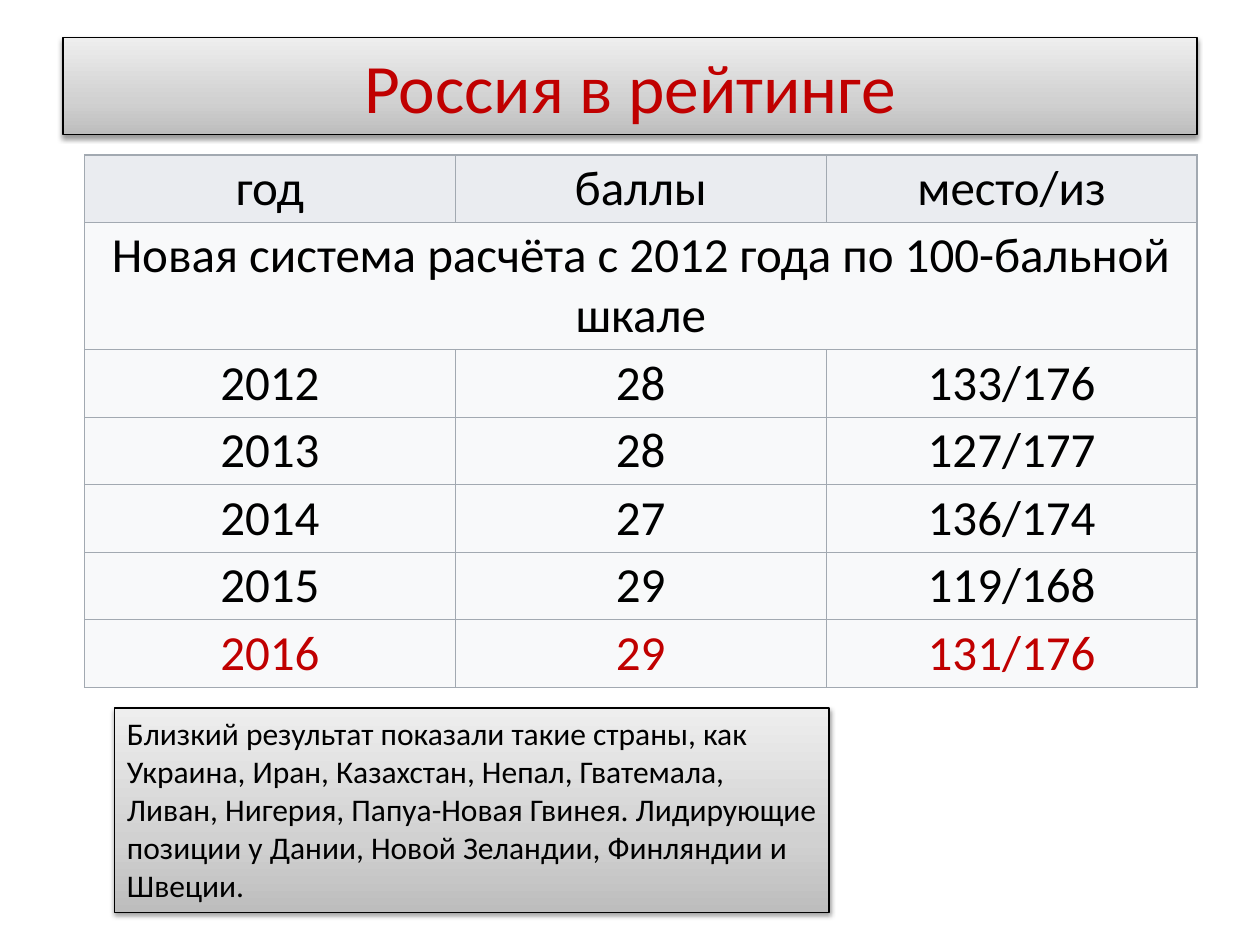
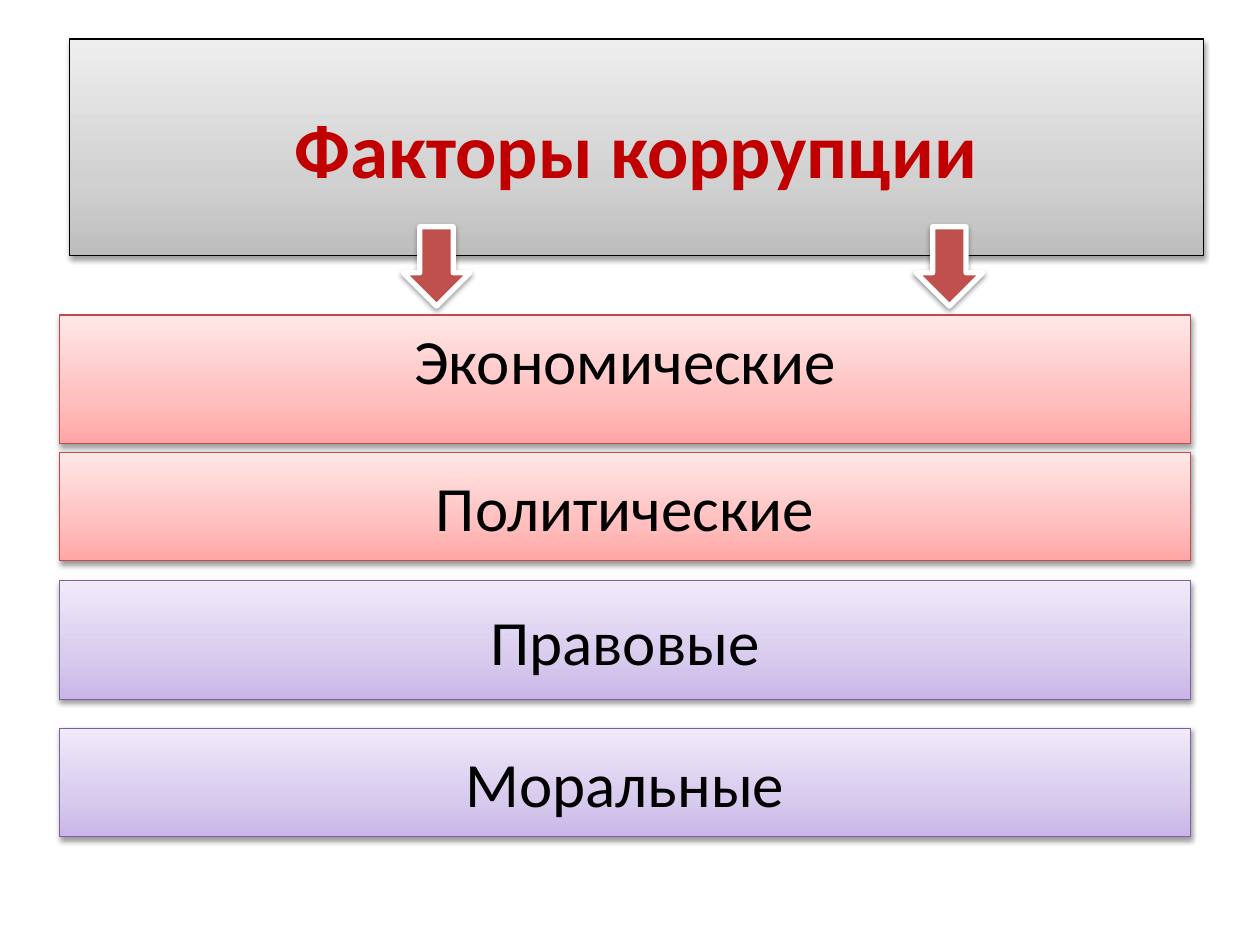
import copy
from dataclasses import dataclass

import lxml.etree
import pptx
import pptx.dml.color
import pptx.enum.shapes
import pptx.enum.text
import pptx.oxml
import pptx.oxml.ns
import pptx.util

Inches = pptx.util.Inches
Pt = pptx.util.Pt
Shape = pptx.enum.shapes.MSO_SHAPE
Align = pptx.enum.text.PP_ALIGN
Anchor = pptx.enum.text.MSO_ANCHOR
qn = pptx.oxml.ns.qn

FONT = "Calibri"
BLACK, WHITE, RED = "000000", "FFFFFF", "C00000"
BRICK, EDGE = "C0504D", "A2A9B1"
HEAD, BODY = "EAECF0", "F8F9FA"


@dataclass(frozen=True)
class Theme:
    stops: tuple[str, str, str]  # from bottom to top
    line: str


GREY = Theme(("BDBDBD", "D1D1D1", "EEEEEE"), BLACK)
ROSE = Theme(("FFA6A5", "FFC0BF", "FFE7E7"), "BF4C48")
LILAC = Theme(("C9B5E8", "D8CBEE", "F0EAF9"), "7D60A0")
PLACES = (0, 0.35, 1)


@dataclass(frozen=True)
class Panel:
    text: str
    left: float
    top: float
    width: float
    height: float
    theme: Theme
    size: float = 36
    color: str = BLACK
    bold: bool = False
    align: Align = Align.CENTER
    anchor: Anchor = Anchor.MIDDLE


def rgb(code: str) -> pptx.dml.color.RGBColor:
    return pptx.dml.color.RGBColor.from_string(code)


def write(frame, text: str, size: float, color: str, align: Align, bold: bool = False) -> None:
    frame.text = text
    frame.word_wrap = True
    for para in frame.paragraphs:
        para.alignment = align
        for run in para.runs:
            font = run.font
            font.name, font.size, font.bold = FONT, Pt(size), bold
            font.color.rgb = rgb(color)


def shade(shape) -> None:
    """Give the shape a soft shadow straight below it."""
    shape.shadow.inherit = False
    effects = shape._element.spPr.find(qn("a:effectLst"))
    drop = lxml.etree.SubElement(effects, qn("a:outerShdw"), blurRad=str(Pt(3.1)),
                                 dist=str(Pt(1.6)), dir="5400000", rotWithShape="0")
    tint = lxml.etree.SubElement(drop, qn("a:srgbClr"), val=BLACK)
    lxml.etree.SubElement(tint, qn("a:alpha"), val="38000")


def blend(shape, theme: Theme) -> None:
    """Fill the shape with the three-stop gradient of its theme."""
    shape.fill.gradient()
    shape.fill.gradient_angle = 90
    first = next(shape._element.spPr.iter(qn("a:gs")))
    first.addnext(copy.deepcopy(first))
    for stop, place, color in zip(shape.fill.gradient_stops, PLACES, theme.stops):
        stop.position = place
        stop.color.rgb = rgb(color)


def add_panel(slide, panel: Panel):
    shape = slide.shapes.add_shape(Shape.RECTANGLE, Inches(panel.left), Inches(panel.top),
                                   Inches(panel.width), Inches(panel.height))
    shade(shape)
    blend(shape, panel.theme)
    shape.line.color.rgb = rgb(panel.theme.line)
    shape.line.width = Pt(0.75)
    write(shape.text_frame, panel.text, panel.size, panel.color, panel.align, panel.bold)
    shape.text_frame.vertical_anchor = panel.anchor
    return shape


def add_arrow(slide, left: float) -> None:
    arrow = slide.shapes.add_shape(Shape.DOWN_ARROW, Inches(left), Inches(1.8),
                                   Inches(0.53), Inches(0.63))
    shade(arrow)
    arrow.fill.solid()
    arrow.fill.fore_color.rgb = rgb(BRICK)
    arrow.line.color.rgb = rgb(WHITE)
    arrow.line.width = Pt(3)


def style_cell(cell, fill: str) -> None:
    props = cell._tc.get_or_add_tcPr()
    for side in ("lnL", "lnR", "lnT", "lnB"):
        line = lxml.etree.SubElement(props, qn(f"a:{side}"), w=str(Pt(0.75)))
        paint = lxml.etree.SubElement(line, qn("a:solidFill"))
        lxml.etree.SubElement(paint, qn("a:srgbClr"), val=EDGE)
    cell.fill.solid()
    cell.fill.fore_color.rgb = rgb(fill)
    cell.margin_left = cell.margin_right = Inches(0.06)
    cell.margin_top = cell.margin_bottom = Inches(0.03)
    cell.vertical_anchor = Anchor.MIDDLE


def add_scores(slide) -> None:
    rows = (
        ("год", "баллы", "место/из"),
        ("Новая система расчёта с 2012 года по 100-бальной шкале",),
        ("2012", "28", "133/176"),
        ("2013", "28", "127/177"),
        ("2014", "27", "136/174"),
        ("2015", "29", "119/168"),
        ("2016", "29", "131/176"),
    )
    high, last = 0.49, len(rows) - 1
    table = slide.shapes.add_table(len(rows), 3, Inches(0.67), Inches(1.23),
                                   Inches(8.83), Inches(high * len(rows))).table
    table.first_row = table.horz_banding = False
    for r, row in enumerate(rows):
        table.rows[r].height = Inches(high)
        for cell in table.rows[r].cells:
            style_cell(cell, BODY if r else HEAD)
        if len(row) == 1:
            table.cell(r, 0).merge(table.cell(r, 2))
        for c, text in enumerate(row):
            write(table.cell(r, c).text_frame, text, 28, RED if r == last else BLACK,
                  Align.CENTER)


def draw_rank(slide) -> None:
    add_panel(slide, Panel("Россия в рейтинге", 0.5, 0.3, 9, 0.77, GREY, 39.6, RED))
    add_scores(slide)
    note = ("Близкий результат показали такие страны, как Украина, Иран, Казахстан, "
            "Непал, Гватемала, Ливан, Нигерия, Папуа-Новая Гвинея. "
            "Лидирующие позиции у Дании, Новой Зеландии, Финляндии и Швеции.")
    box = add_panel(slide, Panel(note, 0.91, 5.62, 5.67, 1.62, GREY, 18,
                                 align=Align.LEFT, anchor=Anchor.TOP))
    box.text_frame.auto_size = pptx.enum.text.MSO_AUTO_SIZE.SHAPE_TO_FIT_TEXT


def draw_causes(slide) -> None:
    add_panel(slide, Panel("Факторы коррупции", 0.55, 0.31, 9, 1.72, GREY, 44, RED, True))
    causes = (
        ("Экономические", 2.5, 1.02, ROSE, Anchor.TOP),
        ("Политические", 3.59, 0.86, ROSE, Anchor.MIDDLE),
        ("Правовые", 4.61, 0.94, LILAC, Anchor.MIDDLE),
        ("Моральные", 5.78, 0.86, LILAC, Anchor.MIDDLE),
    )
    for text, top, height, theme, anchor in causes:
        add_panel(slide, Panel(text, 0.47, top, 8.98, height, theme, anchor=anchor))
    for left in (3.2, 7.27):
        add_arrow(slide, left)


def main() -> None:
    deck = pptx.Presentation()
    deck.slide_width, deck.slide_height = Inches(10), Inches(7.5)
    for draw in (draw_rank, draw_causes):
        draw(deck.slides.add_slide(deck.slide_layouts[6]))
    deck.save("out.pptx")


if __name__ == "__main__":
    main()
